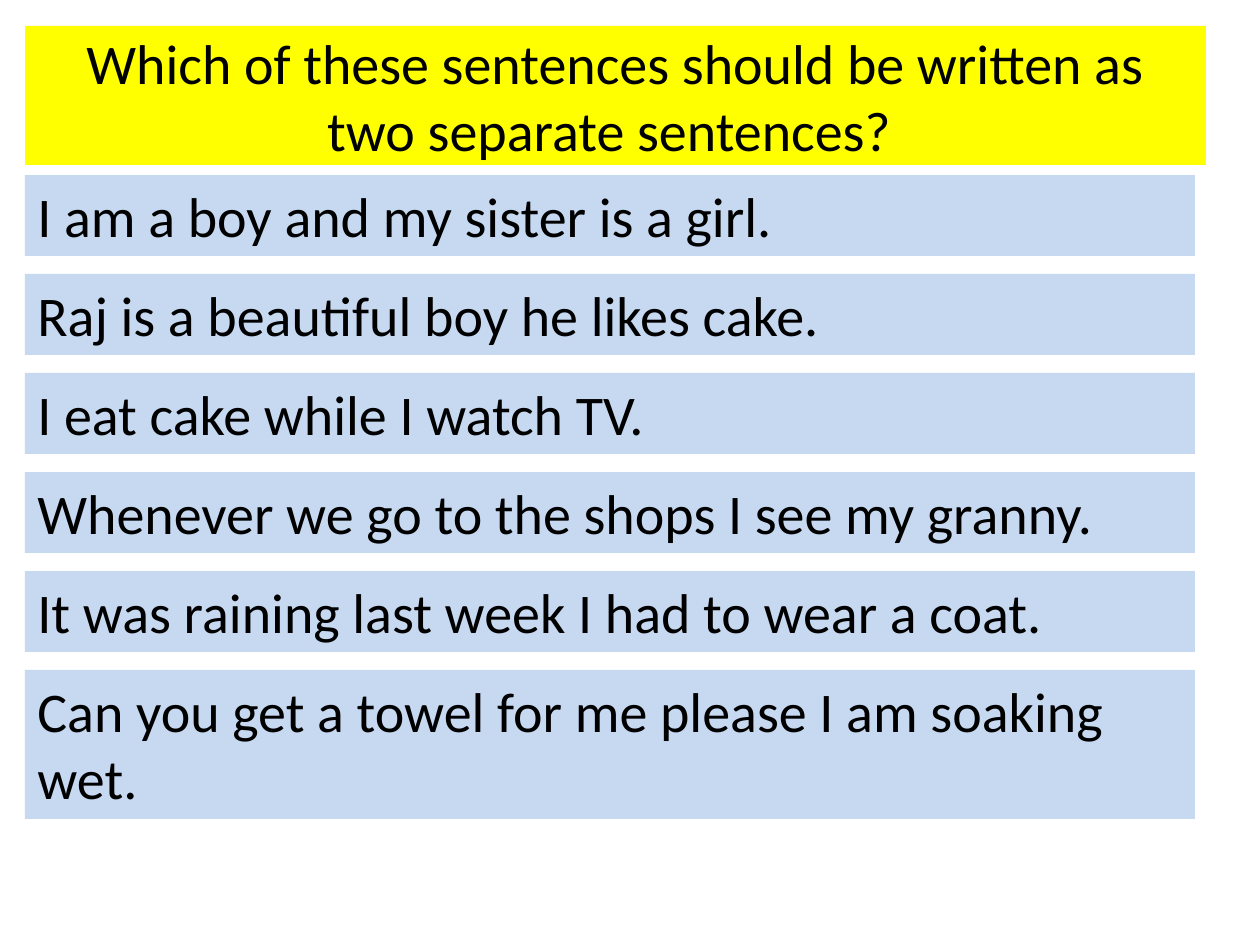
from dataclasses import dataclass

from pptx import Presentation
from pptx.dml.color import RGBColor as Rgb
from pptx.enum.text import MSO_ANCHOR as Anchor, MSO_AUTO_SIZE as Fit, PP_ALIGN as Align
from pptx.slide import Slide
from pptx.util import Emu, Inches, Pt


@dataclass(frozen=True)
class Theme:
    title: Rgb = Rgb(0xFF, 0xFF, 0x00)
    row: Rgb = Rgb(0xC6, 0xD9, 0xF1)
    ink: Rgb = Rgb(0x00, 0x00, 0x00)
    font: str = "Calibri"
    size: Pt = Pt(32)


@dataclass(frozen=True)
class Box:
    text: str
    top: int
    width: int
    height: int
    fill: Rgb
    align: Align = Align.LEFT
    anchor: Anchor = Anchor.TOP
    fit: Fit = Fit.SHAPE_TO_FIT_TEXT


THEME = Theme()
LEFT = 25
TOP, PITCH, WIDTH = 175, 99, 1170
SINGLE, DOUBLE = 81, 149  # heights of one and two lines

TITLE = "Which of these sentences should be written as two separate sentences? "
ROWS = [
    ("I am a boy and my sister is a girl.", SINGLE),
    ("Raj is a beautiful boy he likes cake.", SINGLE),
    ("I eat cake while I watch TV.", SINGLE),
    ("Whenever we go to the shops I see my granny.", SINGLE),
    ("It was raining last week I had to wear a coat.", SINGLE),
    ("Can you get a towel for me please I am soaking wet.", DOUBLE),
]


def px(count: int) -> Emu:
    return Emu(round(count * Inches(1) / 126))


def draw(slide: Slide, box: Box) -> None:
    shape = slide.shapes.add_textbox(px(LEFT), px(box.top), px(box.width), px(box.height))
    shape.fill.solid()
    shape.fill.fore_color.rgb = box.fill
    frame = shape.text_frame
    style = {"word_wrap": True, "auto_size": box.fit, "vertical_anchor": box.anchor}
    for name, value in style.items():
        setattr(frame, name, value)
    para = frame.paragraphs[0]
    para.alignment = box.align
    run = para.add_run()
    run.text = box.text
    for name, value in {"name": THEME.font, "size": THEME.size}.items():
        setattr(run.font, name, value)
    run.font.color.rgb = THEME.ink


def main() -> None:
    deck = Presentation()
    deck.slide_width, deck.slide_height = Inches(10), Inches(7.5)
    slide = deck.slides.add_slide(deck.slide_layouts[6])

    # Question banner
    draw(slide, Box(TITLE, 26, 1181, 139, THEME.title, Align.CENTER, Anchor.MIDDLE, Fit.NONE))

    # Sentences, evenly stacked
    for i, (text, height) in enumerate(ROWS):
        draw(slide, Box(text, TOP + i * PITCH, WIDTH, height, THEME.row))

    deck.save("out.pptx")


if __name__ == "__main__":
    main()
